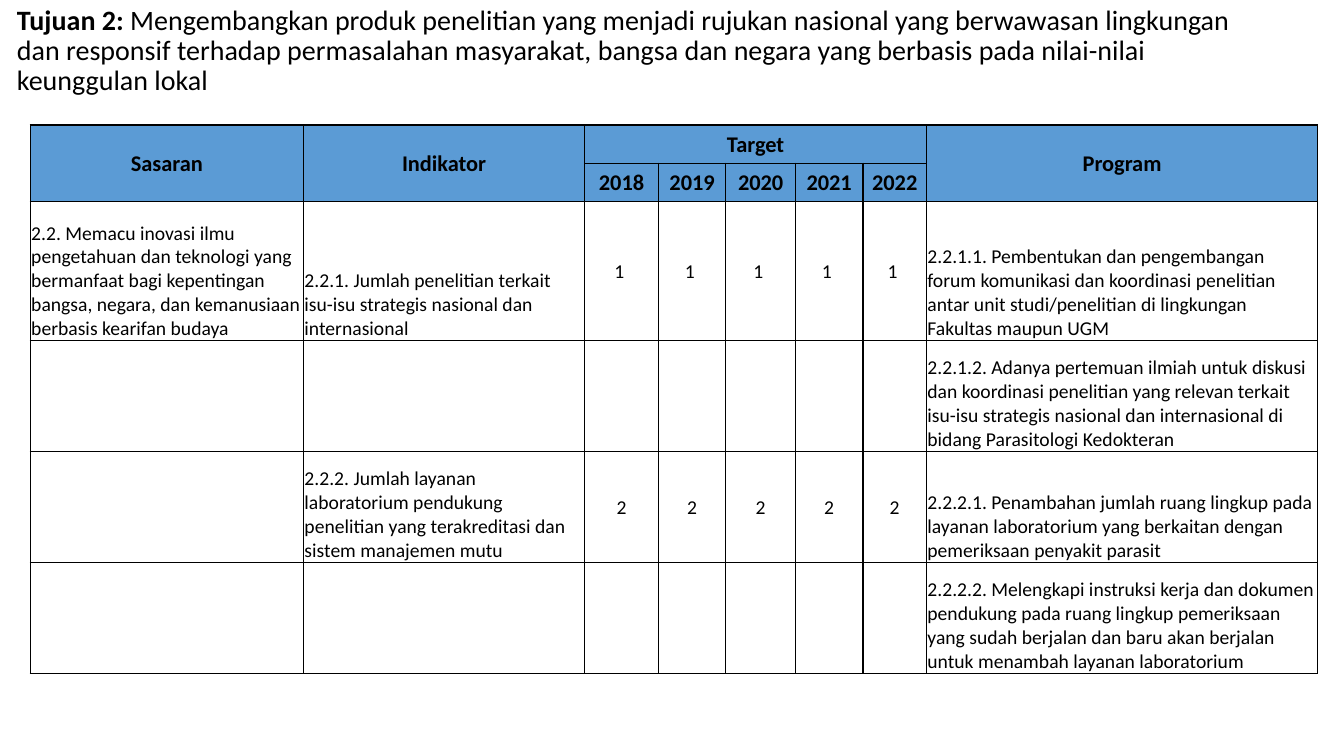
from lxml import etree
from pptx import Presentation
from pptx.dml.color import RGBColor
from pptx.enum.text import MSO_ANCHOR, PP_ALIGN
from pptx.oxml.ns import qn
from pptx.util import Inches, Pt

# Content
TITLE = [
    ("Tujuan 2: ", True),
    ("Mengembangkan produk penelitian yang menjadi rujukan nasional yang berwawasan "
     "lingkungan dan responsif terhadap permasalahan masyarakat, bangsa dan negara yang "
     "berbasis pada nilai-nilai keunggulan lokal", False),
]
YEARS = ["2018", "2019", "2020", "2021", "2022"]
BLANK = [""] * len(YEARS)
ROWS = [
    ["Sasaran", "Indikator", "Target", "", "", "", "", "Program"],
    ["", "", *YEARS, ""],
    ["2.2. Memacu inovasi ilmu pengetahuan dan teknologi yang bermanfaat bagi kepentingan "
     "bangsa, negara, dan kemanusiaan berbasis kearifan budaya",
     "2.2.1. Jumlah penelitian terkait isu-isu strategis nasional dan internasional",
     *["1 "] * len(YEARS),
     "2.2.1.1. Pembentukan dan pengembangan forum komunikasi dan koordinasi penelitian "
     "antar unit studi/penelitian di lingkungan Fakultas maupun UGM"],
    ["", "", *BLANK,
     "2.2.1.2. Adanya pertemuan ilmiah untuk diskusi dan koordinasi penelitian yang relevan "
     "terkait isu-isu strategis nasional dan internasional di bidang Parasitologi Kedokteran"],
    ["",
     "2.2.2. Jumlah layanan laboratorium pendukung penelitian yang terakreditasi dan "
     "sistem manajemen mutu",
     *["2"] * len(YEARS),
     "2.2.2.1. Penambahan jumlah ruang lingkup pada layanan laboratorium yang berkaitan "
     "dengan pemeriksaan penyakit parasit"],
    ["", "", *BLANK,
     "2.2.2.2. Melengkapi instruksi kerja dan dokumen pendukung pada ruang lingkup pemeriksaan "
     "yang sudah berjalan dan baru akan berjalan untuk menambah layanan laboratorium"],
]
COL_WIDTHS = [2.71, 2.79, 0.73, 0.67, 0.69, 0.67, 0.63, 3.88]
ROW_HEIGHTS = [0.38, 0.38, 1.38, 1.1, 1.1, 1.1]
MERGES = [((0, 0), (1, 0)), ((0, 1), (1, 1)), ((0, 2), (0, 6)), ((0, 7), (1, 7))]
HEADER_ROWS = 2
YEAR_COLS = range(2, 7)
COLORS = {"text": "000000", "header": "5B9BD5", "border": "000000"}
FONT = "Calibri"


def style_run(r, size, bold):
    r.font.name = FONT
    r.font.size = Pt(size)
    r.font.bold = bold
    r.font.color.rgb = RGBColor.from_string(COLORS["text"])


def add_borders(cell):
    tcPr = cell._tc.get_or_add_tcPr()
    for i, side in enumerate(("lnL", "lnR", "lnT", "lnB")):
        ln = etree.Element(qn(f"a:{side}"), w=str(Pt(1)))
        fill = etree.SubElement(ln, qn("a:solidFill"))
        etree.SubElement(fill, qn("a:srgbClr"), val=COLORS["border"])
        tcPr.insert(i, ln)


prs = Presentation()
prs.slide_width, prs.slide_height = Inches(13.33), Inches(7.5)
s = prs.slides.add_slide(prs.slide_layouts[6])

# Title
tf = s.shapes.add_textbox(Inches(0.07), Inches(0.07), Inches(12.24), Inches(0.88)).text_frame
tf.word_wrap = True
tf.vertical_anchor = MSO_ANCHOR.MIDDLE
p = tf.paragraphs[0]
p.line_spacing = 0.9
for text, bold in TITLE:
    r = p.add_run()
    r.text = text
    style_run(r, 20, bold)

# Table grid
table = s.shapes.add_table(len(ROWS), len(COL_WIDTHS), Inches(0.3), Inches(1.24),
                           Inches(sum(COL_WIDTHS)), Inches(sum(ROW_HEIGHTS))).table
table.horz_banding = False
for col, width in zip(table.columns, COL_WIDTHS):
    col.width = Inches(width)
for row, height in zip(table.rows, ROW_HEIGHTS):
    row.height = Inches(height)
for start, end in MERGES:
    table.cell(*start).merge(table.cell(*end))

# Table cells
for i, row in enumerate(ROWS):
    for j, text in enumerate(row):
        cell = table.cell(i, j)
        header = i < HEADER_ROWS
        centred = header or j in YEAR_COLS
        if header:
            cell.fill.solid()
            cell.fill.fore_color.rgb = RGBColor.from_string(COLORS["header"])
        else:
            cell.fill.background()
        add_borders(cell)
        cell.margin_left = cell.margin_right = cell.margin_top = Inches(0.01)
        cell.margin_bottom = 0
        cell.vertical_anchor = MSO_ANCHOR.MIDDLE if centred else MSO_ANCHOR.BOTTOM
        if text:
            p = cell.text_frame.paragraphs[0]
            p.text = text
            p.alignment = PP_ALIGN.CENTER if centred else PP_ALIGN.LEFT
            style_run(p.runs[0], 16 if header else 14, header)

prs.save("out.pptx")
